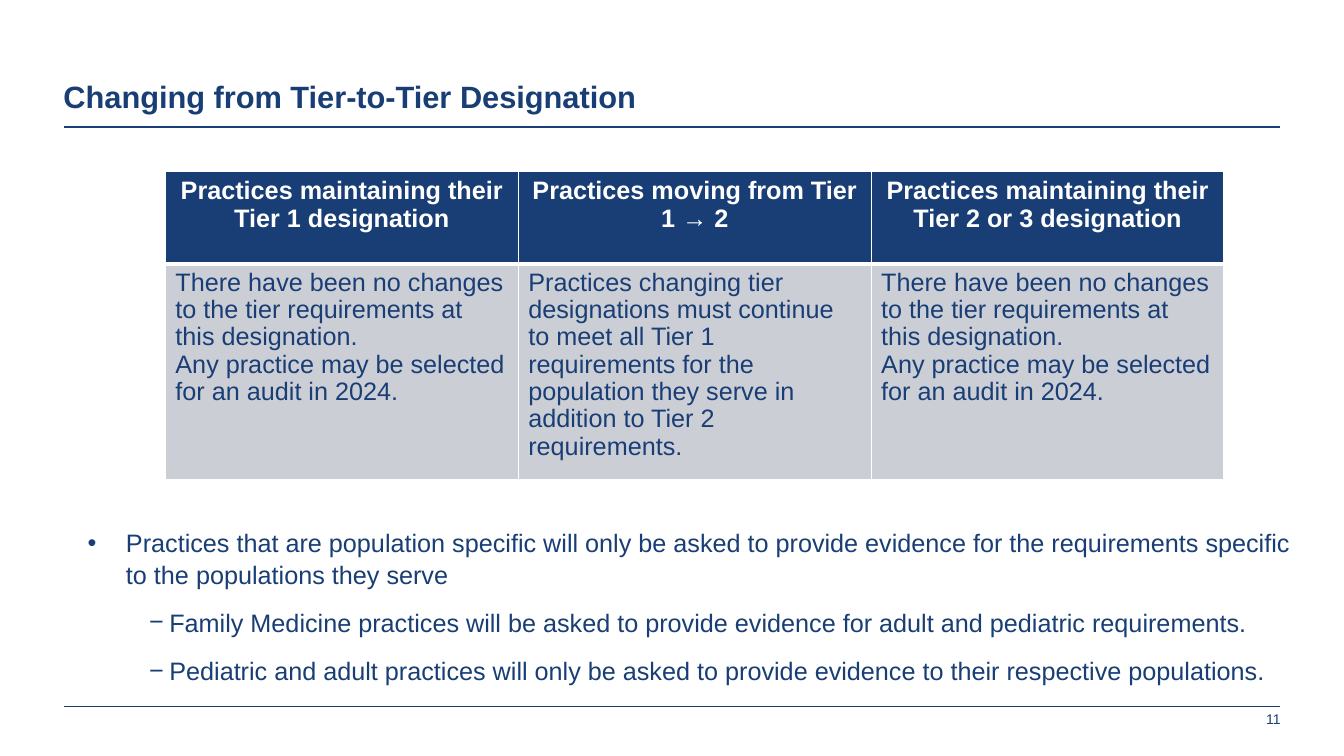
from lxml.etree import SubElement
from pptx import Presentation
from pptx.dml.color import RGBColor
from pptx.enum.shapes import MSO_CONNECTOR
from pptx.enum.text import MSO_ANCHOR, PP_ALIGN
from pptx.oxml.ns import qn
from pptx.util import Inches, Pt

NAVY = RGBColor(0x18, 0x3E, 0x75)
GREY = RGBColor(0xCC, 0xCE, 0xD6)
WHITE = RGBColor(0xFF, 0xFF, 0xFF)

TIERS = [
    ("Practices maintaining their Tier 1 designation",
     ["There have been no changes to the tier requirements at this designation.",
      "Any practice may be selected for an audit in 2024."]),
    ("Practices moving from Tier 1 → 2",
     ["Practices changing tier designations must continue to meet all Tier 1 "
      "requirements for the population they serve in addition to Tier 2 requirements."]),
    ("Practices maintaining their Tier 2 or 3 designation",
     ["There have been no changes to the tier requirements at this designation.",
      "Any practice may be selected for an audit in 2024."]),
]

# level, left margin, hanging indent, bullet, text
NOTES = [
    (0, 0.38, 0.38, "•",
     "Practices that are population specific will only be asked to provide evidence "
     "for the requirements specific to the populations they serve"),
    (3, 0.81, 0.2, "−",
     "Family Medicine practices will be asked to provide evidence for adult and "
     "pediatric requirements."),
    (3, 0.81, 0.2, "−",
     "Pediatric and adult practices will only be asked to provide evidence to their "
     "respective populations."),
]


class TierSlide:
    font = "Arial"

    def __init__(self, deck):
        self.slide = deck.slides.add_slide(deck.slide_layouts[6])

    def rule(self, y):
        line = self.slide.shapes.add_connector(
            MSO_CONNECTOR.STRAIGHT, Inches(0.63), Inches(y), Inches(12.7), Inches(y))
        line.line.color.rgb = NAVY
        line.line.width = Pt(0.75)
        SubElement(line.line._get_or_add_ln().getparent(), qn("a:effectLst"))

    def run(self, paragraph, text, size=18, color=NAVY, bold=False):
        run = paragraph.add_run()
        run.text = text
        run.font.name = self.font
        run.font.size = Pt(size)
        run.font.bold = bold
        run.font.color.rgb = color

    def frame(self, left, top, width, height):
        """Add a wrapping text box without insets and return its text frame."""
        box = self.slide.shapes.add_textbox(
            Inches(left), Inches(top), Inches(width), Inches(height))
        frame = box.text_frame
        frame.word_wrap = True
        frame.margin_left = frame.margin_right = 0
        frame.margin_top = frame.margin_bottom = 0
        return frame

    def title(self, text):
        frame = self.frame(0.63, 0.39, 12.07, 0.75)
        frame.vertical_anchor = MSO_ANCHOR.BOTTOM
        self.run(frame.paragraphs[0], text, size=22, bold=True)

    def page_number(self, text):
        paragraph = self.frame(11.55, 7.05, 1.15, 0.25).paragraphs[0]
        paragraph.alignment = PP_ALIGN.RIGHT
        self.run(paragraph, text, size=10)

    def bullets(self, notes):
        frame = self.frame(0.87, 5.22, 11.96, 1.71)
        for index, (level, margin, hanging, bullet, text) in enumerate(notes):
            paragraph = frame.add_paragraph() if index else frame.paragraphs[0]
            paragraph.level = level
            paragraph.space_after = Pt(12)
            paragraph.line_spacing = 1.04
            properties = paragraph._p.get_or_add_pPr()
            properties.set("marL", str(Inches(margin)))
            properties.set("indent", str(-Inches(hanging)))
            SubElement(properties, qn("a:buFont"), typeface=self.font)
            SubElement(properties, qn("a:buChar"), char=bullet)
            self.run(paragraph, text)

    def borders(self, cell, **widths):
        properties = cell._tc.get_or_add_tcPr()
        for side, width in widths.items():
            line = SubElement(properties, qn(f"a:ln{side}"), w=str(Pt(width)))
            fill = SubElement(line, qn("a:solidFill"))
            SubElement(fill, qn("a:srgbClr"), val=str(WHITE))

    def cell(self, cell, fill, texts, color, bold, alignment, spacing):
        cell.fill.solid()
        cell.fill.fore_color.rgb = fill
        for index, text in enumerate(texts):
            frame = cell.text_frame
            paragraph = frame.add_paragraph() if index else frame.paragraphs[0]
            paragraph.alignment = alignment
            paragraph.line_spacing = spacing
            self.run(paragraph, text, color=color, bold=bold)

    def tier_table(self, tiers):
        table = self.slide.shapes.add_table(
            2, len(tiers), Inches(1.64), Inches(1.7), Inches(10.5), Inches(3.02)).table
        table.horz_banding = False
        table.rows[0].height, table.rows[1].height = Inches(0.92), Inches(2.1)
        for column, (heading, details) in enumerate(tiers):
            table.columns[column].width = Inches(3.5)
            head, body = table.cell(0, column), table.cell(1, column)
            self.borders(head, L=1, R=1, T=1, B=3)
            self.borders(body, L=1, R=1, T=3, B=1)
            self.cell(head, NAVY, [heading], WHITE, True, PP_ALIGN.CENTER, 1.0)
            self.cell(body, GREY, details, NAVY, False, PP_ALIGN.LEFT, 0.97)


def main():
    deck = Presentation()
    deck.slide_width, deck.slide_height = Inches(13.33), Inches(7.5)
    page = TierSlide(deck)
    for y in (1.26, 7.01):
        page.rule(y)
    page.bullets(NOTES)
    page.title("Changing from Tier-to-Tier Designation")
    page.page_number("11")
    page.tier_table(TIERS)
    deck.save("out.pptx")


if __name__ == "__main__":
    main()
